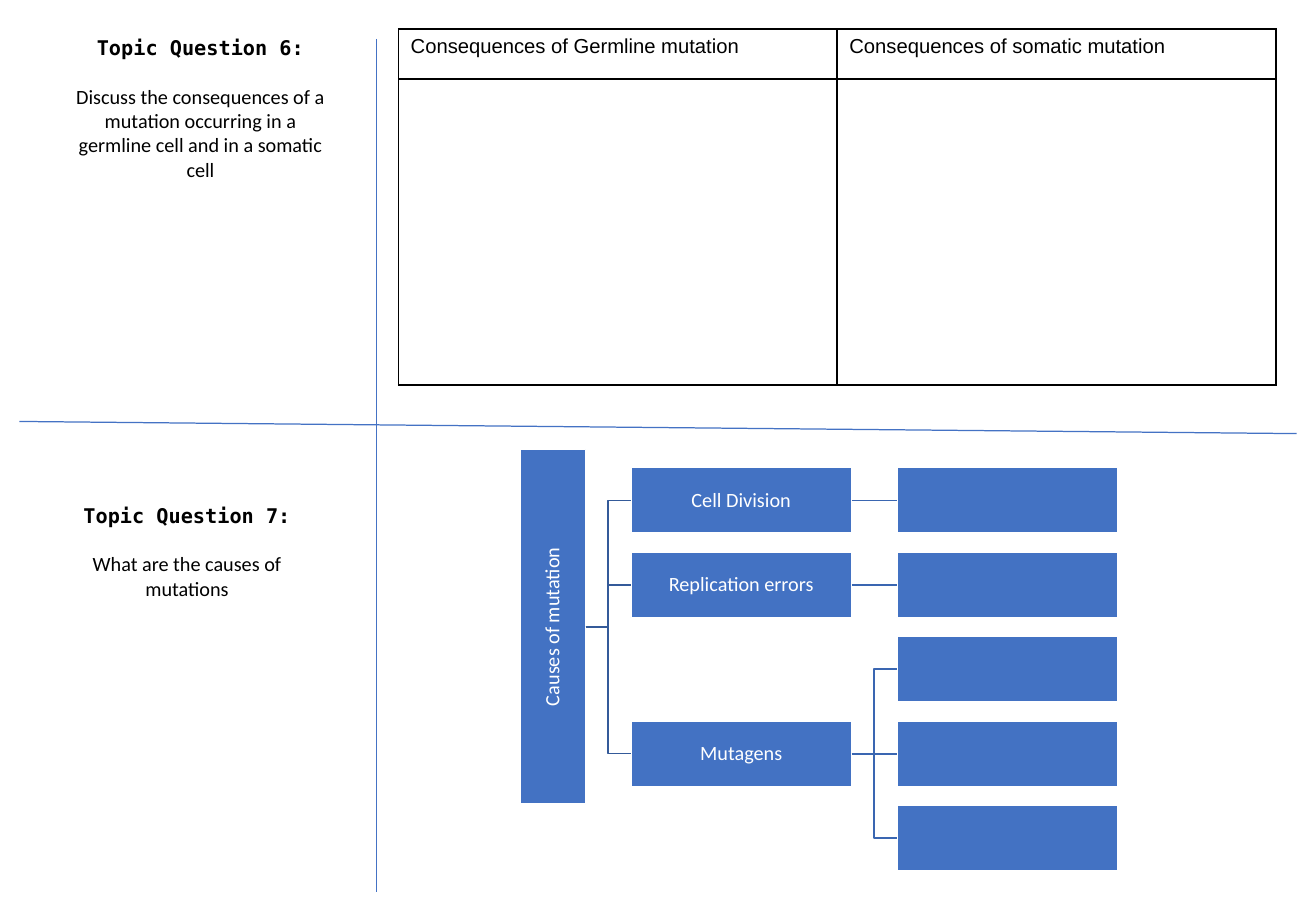
from lxml.etree import SubElement
from pptx import Presentation
from pptx.dml.color import RGBColor
from pptx.enum.shapes import MSO_CONNECTOR as CONN, MSO_SHAPE
from pptx.enum.text import MSO_ANCHOR as ANCHOR, MSO_AUTO_SIZE, PP_ALIGN as ALIGN
from pptx.oxml.ns import qn
from pptx.util import Inches, Pt

BLACK = RGBColor(0x00, 0x00, 0x00)
WHITE = RGBColor(0xFF, 0xFF, 0xFF)
RULE = RGBColor(0x44, 0x72, 0xC4)
BOX = RGBColor(0x43, 0x72, 0xC3)
ROOT_LINK = RGBColor(0x34, 0x5A, 0x99)
LEAF_LINK = RGBColor(0x3A, 0x66, 0xB1)

QUESTION_6 = ("Topic Question 6:",
              "Discuss the consequences of a mutation occurring in a germline cell and in a somatic cell")
QUESTION_7 = ("Topic Question 7:", "What are the causes of mutations")
HEADERS = ["Consequences of Germline mutation", "Consequences of somatic mutation"]
ROW_HEIGHTS = [0.41, 2.52]
RULES = [(3.1, 0.32, 3.1, 7.34), (0.16, 3.47, 10.67, 3.57)]
ROOT = "Causes of mutation"
BRANCHES = [("Cell Division", 0, [0]), ("Replication errors", 1, [1]), ("Mutagens", 3, [2, 3, 4])]

BOX_W, BOX_H = 1.82, 0.54
TREE_TOP, PITCH = 3.85, 0.695
BRANCH_X, LEAF_X = 5.19, 7.38


def style_run(p, size, font, color, bold=False):
    for r in p.runs:
        r.font.size, r.font.name, r.font.bold = Pt(size), font, bold
        r.font.color.rgb = color


def write_question(sp, question, x, y):
    sp.left, sp.top, sp.width, sp.height = map(Inches, (x, y, 2.16, 1.22))
    tf = sp.text_frame
    tf.word_wrap, tf.auto_size = True, MSO_AUTO_SIZE.NONE
    tf.vertical_anchor = ANCHOR.TOP
    tf.margin_left = tf.margin_right = tf.margin_top = tf.margin_bottom = 0
    tf.text = "\n".join(question)
    heading, body = tf.paragraphs
    for p in (heading, body):
        p.alignment, p.line_spacing, p.space_before = ALIGN.CENTER, 1.0, Pt(0)
    body.space_before = Pt(14.5)
    style_run(heading, 12, "DejaVu Sans Mono", BLACK, True)
    style_run(body, 12, "Calibri", BLACK)


def add_line(kind, ends, color, width):
    line = s.shapes.add_connector(kind, *map(Inches, ends))
    line.line.color.rgb, line.line.width = color, Pt(width)
    SubElement(line._element.spPr, qn("a:effectLst"))
    return line


def add_box(text, x, y, w=BOX_W, h=BOX_H):
    sp = s.shapes.add_shape(MSO_SHAPE.RECTANGLE, *map(Inches, (x, y, w, h)))
    sp.shadow.inherit = False
    sp.fill.solid()
    sp.fill.fore_color.rgb = BOX
    sp.line.color.rgb, sp.line.width = WHITE, Pt(1)
    if text:
        tf = sp.text_frame
        tf.margin_left = tf.margin_right = tf.margin_top = tf.margin_bottom = Inches(0.01)
        tf.vertical_anchor = ANCHOR.MIDDLE
        tf.text = text
        p = tf.paragraphs[0]
        p.alignment, p.line_spacing = ALIGN.CENTER, 0.9
        style_run(p, 12, "Calibri", WHITE)
    return sp


def link(parent, child, color):
    level = abs(parent.top + parent.height / 2 - child.top - child.height / 2) < Inches(0.01)
    line = add_line(CONN.STRAIGHT if level else CONN.ELBOW, (0, 0, 1, 1), color, 1)
    line.begin_connect(parent, 3)
    line.end_connect(child, 1)


def frame_cell(cell):
    tcPr = cell._tc.get_or_add_tcPr()
    for side in ("a:lnL", "a:lnR", "a:lnT", "a:lnB"):
        ln = SubElement(tcPr, qn(side), w=str(Pt(1)))
        fill = SubElement(ln, qn("a:solidFill"))
        SubElement(fill, qn("a:srgbClr"), val=str(BLACK))
    cell.fill.background()


prs = Presentation()
prs.slide_width, prs.slide_height = Inches(10.83), Inches(7.5)
s = prs.slides.add_slide(prs.slide_layouts[5])

write_question(s.shapes.title, QUESTION_6, 0.57, 0.29)
for ends in RULES:
    add_line(CONN.STRAIGHT, ends, RULE, 0.75)
write_question(s.shapes.add_textbox(0, 0, 0, 0), QUESTION_7, 0.46, 4.14)

table = s.shapes.add_table(2, 2, *map(Inches, (3.28, 0.24, 7.22, sum(ROW_HEIGHTS)))).table
table.first_row = table.horz_banding = False
for row, height in zip(table.rows, ROW_HEIGHTS):
    row.height = Inches(height)
    for cell in row.cells:
        frame_cell(cell)
for cell, header in zip(table.rows[0].cells, HEADERS):
    cell.text = header
    style_run(cell.text_frame.paragraphs[0], 12, "Arial", BLACK)

root = add_box(ROOT, 4.28, 3.7, 0.54, 2.92)
root.text_frame._txBody.bodyPr.set("vert", "vert270")
for name, slot, leaves in BRANCHES:
    branch = add_box(name, BRANCH_X, TREE_TOP + slot * PITCH)
    link(root, branch, ROOT_LINK)
    for leaf in leaves:
        link(branch, add_box("", LEAF_X, TREE_TOP + leaf * PITCH), LEAF_LINK)

prs.save("out.pptx")
